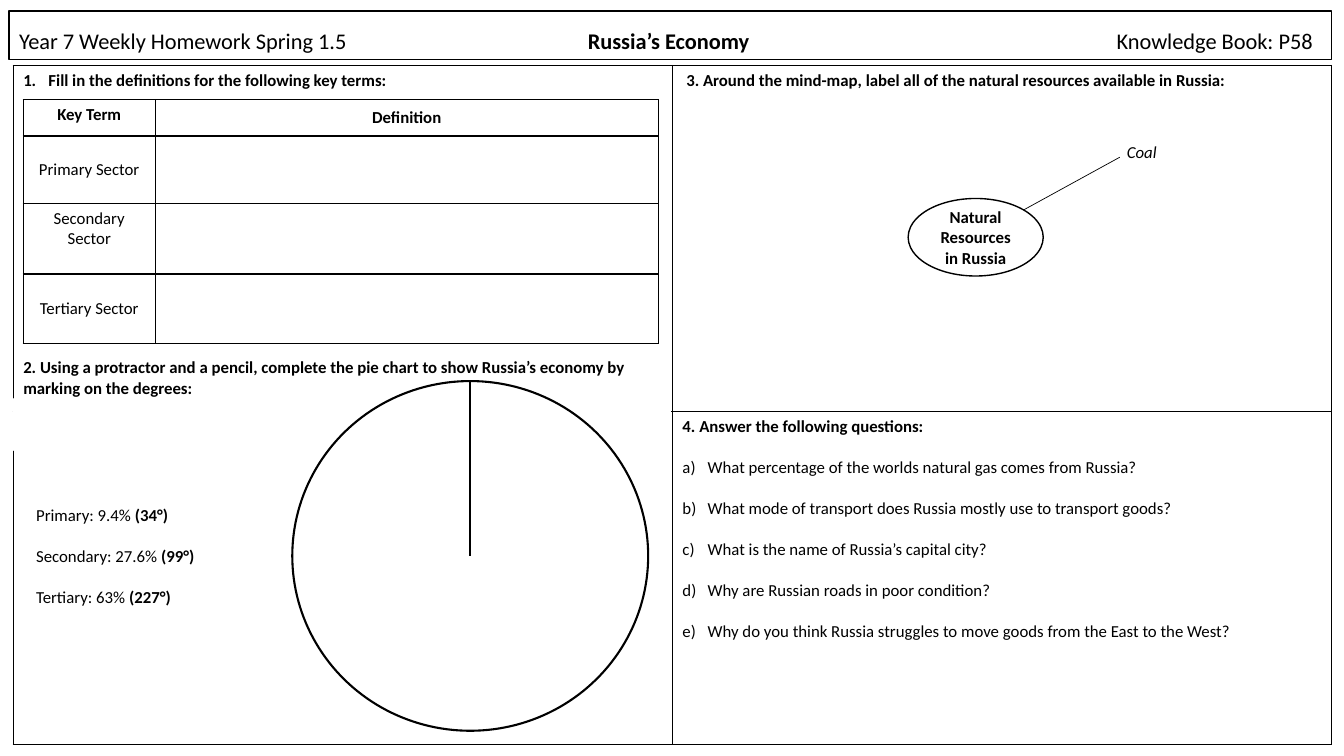
from lxml import etree
from pptx import Presentation
from pptx import util as u
from pptx.dml import color
from pptx.enum import shapes, text
from pptx.oxml import ns

HEADER = [("Year 7 Weekly Homework Spring 1.5", False),
          ("\tRussia’s Economy", True),
          ("\tKnowledge Book: P58", False)]
TERMS_TASK = "Fill in the definitions for the following key terms:"
TERM_HEADS = ["Key Term", "Definition"]
TERMS = ["Primary Sector", "Secondary Sector", "Tertiary Sector"]
PIE_TASK = ("2. Using a protractor and a pencil, complete the pie chart to show "
            "Russia’s economy by marking on the degrees:")
SECTORS = [("Primary: 9.4% ", "(34°)"), ("Secondary: 27.6% ", "(99°)"),
           ("Tertiary: 63% ", "(227°)")]
MAP_TASK = "3. Around the mind-map, label all of the natural resources available in Russia:"
MAP_HUB = "Natural Resources in Russia"
MAP_EXAMPLE = "Coal"
QUESTIONS_TASK = "4. Answer the following questions:"
QUESTIONS = [
    "What percentage of the worlds natural gas comes from Russia?",
    "What mode of transport does Russia mostly use to transport goods?",
    "What is the name of Russia’s capital city?",
    "Why are Russian roads in poor condition?",
    "Why do you think Russia struggles to move goods from the East to the West?",
]
THEME = {"font": "Calibri", "ink": "000000", "paper": "FFFFFF",
         "body": 12, "header": 16, "line": 14.65}

CENTER = text.PP_ALIGN.CENTER
MIDDLE = text.MSO_ANCHOR.MIDDLE


def rgb(name):
    return color.RGBColor.from_string(THEME[name])


def child(parent, tag, **attributes):
    return etree.SubElement(parent, ns.qn(tag), attributes)


def write(frame, content, bold=False, italic=False, size="body", align=None,
          before=0, left=0, number=None, spacing=None, tabs=()):
    spans = [(content, bold)] if isinstance(content, str) else content
    para = frame.paragraphs[0] if not frame.text else frame.add_paragraph()
    para.alignment = align
    para.line_spacing = spacing
    para.space_before = u.Pt(before)
    props = para._p.get_or_add_pPr()
    if number:
        left = 18
        props.set("indent", str(-u.Pt(left)))
        child(props, "a:buFont", typeface="+mj-lt")
        child(props, "a:buAutoNum", type=number)
    if left:
        props.set("marL", str(u.Pt(left)))
    if tabs:
        stops = child(props, "a:tabLst")
        for position, kind in tabs:
            child(stops, "a:tab", pos=str(u.Pt(position)), algn=kind)
    for words, strong in spans:
        span = para.add_run()
        span.text = words
        span.font.name = THEME["font"]
        span.font.size = u.Pt(THEME[size])
        span.font.bold = strong
        span.font.italic = italic
        span.font.color.rgb = rgb("ink")


def shape(group, kind, at, width=1, line="ink"):
    box = group.add_shape(kind, *map(u.Pt, at))
    box.shadow.inherit = False
    box.fill.solid()
    box.fill.fore_color.rgb = rgb("paper")
    box.line.color.rgb = rgb(line)
    box.line.width = u.Pt(width)
    return box


def textbox(page, at):
    frame = page.shapes.add_textbox(*map(u.Pt, at)).text_frame
    frame.word_wrap = True
    return frame


def connect(group, start, end, width):
    line = group.add_connector(shapes.MSO_CONNECTOR.STRAIGHT, *map(u.Pt, start + end))
    line.line.color.rgb = rgb("ink")
    line.line.width = u.Pt(width)
    child(line._element.spPr, "a:effectLst")


def grid(page, left, top, columns, rows, filled):
    table = page.shapes.add_table(len(rows), len(columns), u.Pt(left), u.Pt(top),
                                  u.Pt(sum(columns)), u.Pt(sum(rows))).table
    table.first_row = table.horz_banding = False
    for column, width in zip(table.columns, columns):
        column.width = u.Pt(width)
    for row, height in zip(table.rows, rows):
        row.height = u.Pt(height)
    for cell in table.iter_cells():
        props = cell._tc.get_or_add_tcPr()
        for side in ("a:lnL", "a:lnR", "a:lnT", "a:lnB"):
            border = child(props, side, w=str(u.Pt(1)))
            child(child(border, "a:solidFill"), "a:srgbClr", val=THEME["ink"])
        if filled:
            cell.fill.solid()
            cell.fill.fore_color.rgb = rgb("paper")
        else:
            cell.fill.background()
    return table


def add_header(page):
    box = shape(page.shapes, shapes.MSO_SHAPE.RECTANGLE, (6.5, 7.9, 944.6, 34.6))
    frame = box.text_frame
    frame.word_wrap = True
    frame.vertical_anchor = text.MSO_ANCHOR.BOTTOM
    write(frame, HEADER, size="header", align=text.PP_ALIGN.LEFT, spacing=0.9,
          tabs=[(464, "ctr"), (924.2, "r")])


def add_tasks(page):
    table = grid(page, 9.4, 46.8, [470.9] * 2, [247, 238.3], filled=False)
    left, right = table.cell(0, 0).text_frame, table.cell(0, 1).text_frame
    write(left, TERMS_TASK, bold=True, number="arabicPeriod")
    write(left, PIE_TASK, bold=True, before=13 * THEME["line"])
    write(right, MAP_TASK, bold=True, left=2.7)
    answers = table.cell(1, 1).text_frame
    write(answers, QUESTIONS_TASK, bold=True)
    for question in QUESTIONS:
        write(answers, question, number="alphaLcParenR", before=THEME["line"])
    shape(page.shapes, shapes.MSO_SHAPE.RECTANGLE, (10.1, 285.1, 468.7, 36.7), line="paper")


def add_terms(page):
    table = grid(page, 16.6, 71.3, [94.3, 359.3], [25.9, 48.2, 50.4, 49.7], filled=True)
    for index, head in enumerate(TERM_HEADS):
        write(table.cell(0, index).text_frame, head, bold=True, align=CENTER)
    for row, term in enumerate(TERMS, 1):
        write(table.cell(row, 0).text_frame, term, align=CENTER)
    for row, column in [(0, 1), (1, 0), (3, 0)]:
        table.cell(row, column).vertical_anchor = MIDDLE


def add_pie(page):
    frame = textbox(page, (18.7, 357.1, 140.4, 79.9))
    for index, (share, degrees) in enumerate(SECTORS):
        write(frame, [(share, False), (degrees, True)],
              before=THEME["line"] if index else 0)
    left, top, width, height = 208.8, 272.2, 254.2, 249.8
    pie = page.shapes.add_group_shape().shapes
    shape(pie, shapes.MSO_SHAPE.OVAL, (left, top, width, height), width=1.5)
    middle = left + width / 2
    connect(pie, (middle, top), (middle, top + height / 2), 1.5)


def add_mind_map(page):
    hub = shape(page.shapes, shapes.MSO_SHAPE.OVAL, (648.7, 141.8, 96.5, 55.4))
    hub.text_frame.word_wrap = True
    hub.text_frame.vertical_anchor = MIDDLE
    write(hub.text_frame, MAP_HUB, bold=True, align=CENTER)
    write(textbox(page, (797.8, 97.9, 51.8, 21.6)), MAP_EXAMPLE, italic=True)
    connect(page.shapes, (731.5, 149.8), (799.9, 112.3), 0.5)


def main():
    deck = Presentation()
    deck.slide_width, deck.slide_height = u.Pt(960), u.Pt(540)
    page = deck.slides.add_slide(deck.slide_layouts[6])
    for build in (add_header, add_tasks, add_terms, add_pie, add_mind_map):
        build(page)
    deck.save("out.pptx")


if __name__ == "__main__":
    main()
